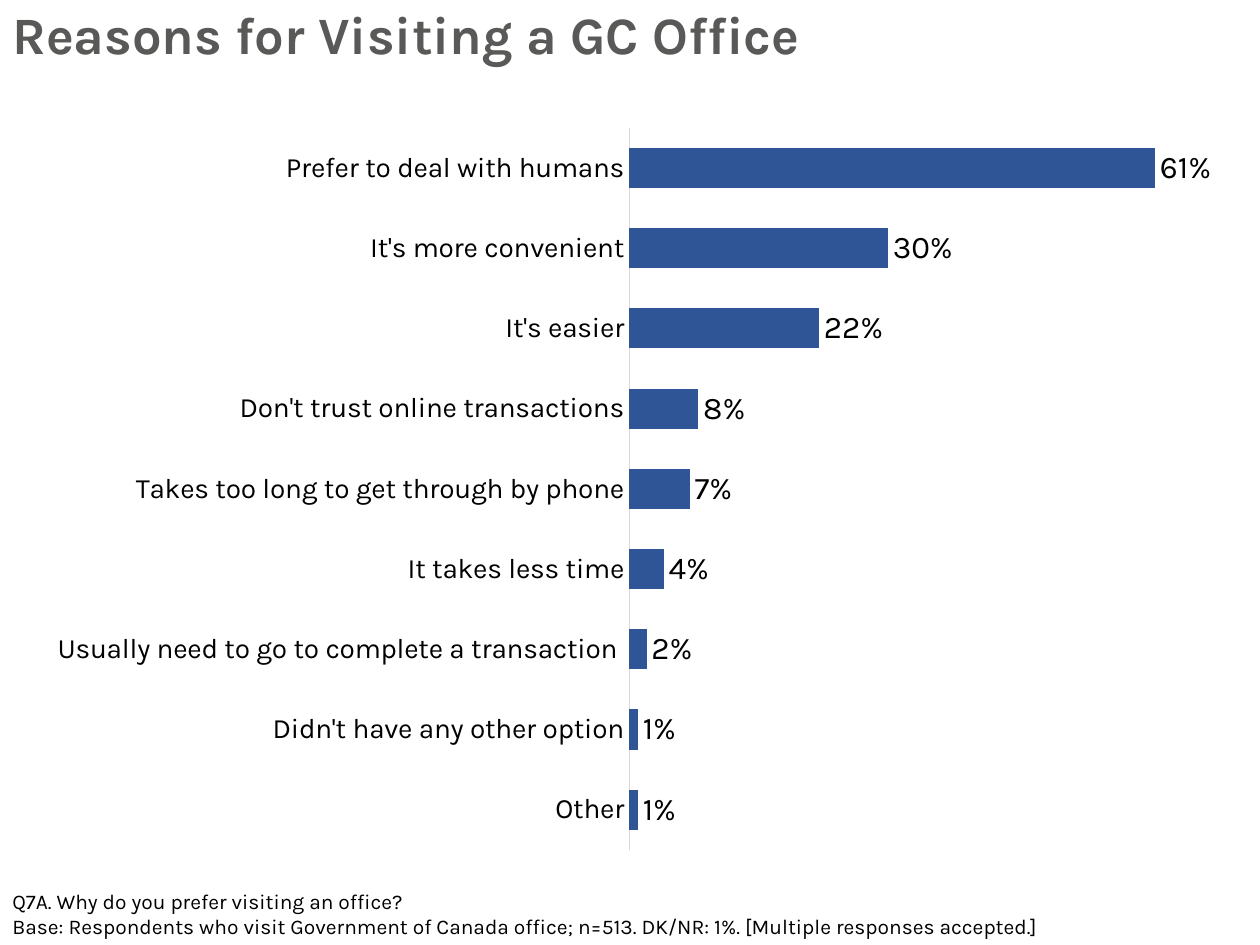
from lxml.etree import SubElement
from pptx import Presentation
from pptx.chart.data import CategoryChartData
from pptx.dml.color import RGBColor
from pptx.enum.chart import XL_CHART_TYPE, XL_LABEL_POSITION, XL_TICK_MARK
from pptx.enum.text import MSO_ANCHOR
from pptx.oxml.ns import qn
from pptx.util import Inches, Pt

TITLE = "Reasons for Visiting a GC Office"
REASONS = [
    ("Prefer to deal with humans", 0.61),
    ("It's more convenient", 0.30),
    ("It's easier", 0.22),
    ("Don't trust online transactions", 0.08),
    ("Takes too long to get through by phone", 0.07),
    ("It takes less time", 0.04),
    ("Usually need to go to complete a transaction ", 0.02),
    ("Didn't have any other option", 0.01),
    ("Other", 0.01),
]
FOOTNOTES = [
    "Q7A. Why do you prefer visiting an office?",
    "Base: Respondents who visit Government of Canada office; n=513. "
    "DK/NR: 1%. [Multiple responses accepted.]",
]
COLORS = {"title": "595958", "text": "000000", "bar": "2F5597", "axis": "D9D9D9"}
FONT = "Karla"
WIDTH, HEIGHT = 10, 7.5
BAND = 0.5
PLOT_SHARES = {"x": 0.5, "y": 0, "w": 0.49, "h": 1}


def style(font, size, color, name=FONT, bold=False):
    font.name, font.size, font.bold = name, Pt(size), bold
    font.color.rgb = RGBColor.from_string(COLORS[color])


def add_band(slide, top, lines, size, color, anchor, bold=False, spacing=1.0):
    """Add a full-width text box with one paragraph per line."""
    frame = slide.shapes.add_textbox(
        0, Inches(top), Inches(WIDTH), Inches(BAND)).text_frame
    frame.word_wrap = True
    frame.vertical_anchor = anchor
    for index, line in enumerate(lines):
        paragraph = frame.add_paragraph() if index else frame.paragraphs[0]
        paragraph.line_spacing = spacing
        run = paragraph.add_run()
        run.text = line
        style(run.font, size, color, bold=bold)


def set_plot_layout(chart, shares):
    """Fix the inner plot area as shares of the chart's size."""
    plot_area = chart.plots[0]._element.getparent()
    for old in plot_area.findall(qn("c:layout")):
        plot_area.remove(old)
    layout = SubElement(plot_area, qn("c:layout"))
    plot_area.insert(0, layout)
    manual = SubElement(layout, qn("c:manualLayout"))
    settings = [("layoutTarget", "inner"), ("xMode", "edge"), ("yMode", "edge")]
    for tag, value in settings + list(shares.items()):
        SubElement(manual, qn(f"c:{tag}")).set("val", str(value))


def add_reasons_chart(slide):
    data = CategoryChartData(number_format="0%")
    data.categories = [reason for reason, _ in reversed(REASONS)]
    data.add_series("Series 1", [share for _, share in reversed(REASONS)])
    chart = slide.shapes.add_chart(
        XL_CHART_TYPE.BAR_CLUSTERED, Inches(0.11), Inches(1.01),
        Inches(9.77), Inches(5.74), data).chart
    chart.has_legend = chart.has_title = False
    style(chart.font, 18, "text", name="Arial")

    reason_axis, share_axis = chart.category_axis, chart.value_axis
    reason_axis.major_tick_mark = reason_axis.minor_tick_mark = XL_TICK_MARK.NONE
    style(reason_axis.tick_labels.font, 16, "text")
    reason_axis.format.line.color.rgb = RGBColor.from_string(COLORS["axis"])
    reason_axis.format.line.width = Pt(0.75)
    share_axis.visible = share_axis.has_major_gridlines = False
    share_axis.minimum_scale, share_axis.maximum_scale = 0, 0.7

    bars = chart.plots[0]
    bars.gap_width = 100
    bars.vary_by_categories = False
    fill = bars.series[0].format.fill
    fill.solid()
    fill.fore_color.rgb = RGBColor.from_string(COLORS["bar"])
    labels = bars.series[0].data_labels
    labels.show_value = True
    labels.position = XL_LABEL_POSITION.OUTSIDE_END
    labels.number_format, labels.number_format_is_linked = "0%", False
    style(labels.font, 18, "text")
    set_plot_layout(chart, PLOT_SHARES)


def main():
    deck = Presentation()
    deck.slide_width, deck.slide_height = Inches(WIDTH), Inches(HEIGHT)
    slide = deck.slides.add_slide(deck.slide_layouts[6])
    add_band(slide, HEIGHT - BAND, FOOTNOTES, 12, "text", MSO_ANCHOR.TOP)
    add_band(slide, 0.05, [TITLE], 30, "title", MSO_ANCHOR.MIDDLE,
             bold=True, spacing=0.9)
    add_reasons_chart(slide)
    deck.save("out.pptx")


if __name__ == "__main__":
    main()
